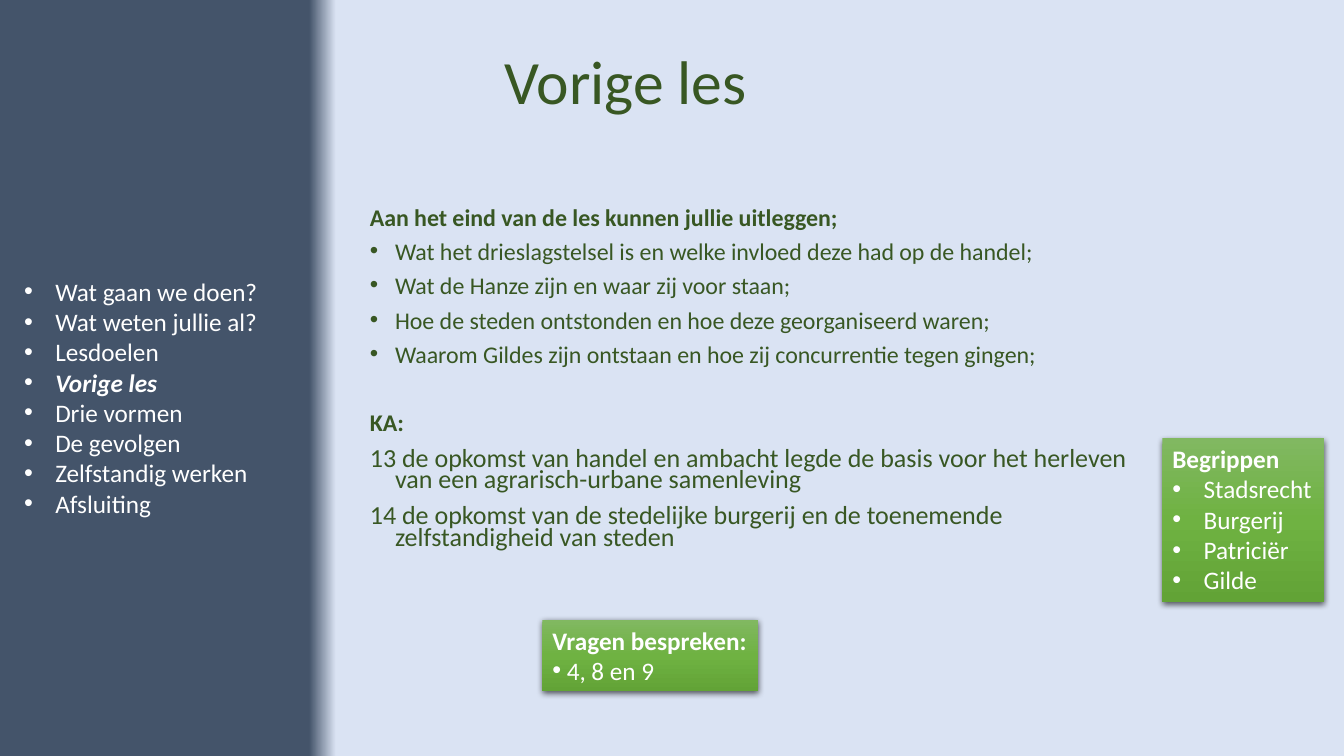
from copy import deepcopy
from lxml import etree
from pptx import Presentation
from pptx.dml.color import RGBColor
from pptx.enum.shapes import MSO_SHAPE
from pptx.enum.text import MSO_ANCHOR, MSO_AUTO_SIZE, PP_ALIGN
from pptx.oxml import parse_xml
from pptx.oxml.ns import nsdecls, qn
from pptx.util import Inches, Pt

RECTANGLE = MSO_SHAPE.RECTANGLE
LEFT = PP_ALIGN.LEFT
TOP, MIDDLE = MSO_ANCHOR.TOP, MSO_ANCHOR.MIDDLE
GROW, FIXED = MSO_AUTO_SIZE.SHAPE_TO_FIT_TEXT, MSO_AUTO_SIZE.NONE

THEME = {
    "font": "Calibri",
    "ink": "385723",
    "light": "FFFFFF",
    "backdrop": [(0.23, "44546A"), (0.25, "DAE3F3")],
    "card": [(0, "81B861"), (0.5, "6FB242"), (1, "62A336")],
    "title_size": 44,
    "goal_size": 17.1,
    "feature_size": 18.6,
    "label_size": 18,
}
CARD_SHADOW = (
    f'<a:effectLst {nsdecls("a")}><a:outerShdw blurRad="57150" dist="19050" '
    'dir="5400000" algn="ctr" rotWithShape="0"><a:srgbClr val="000000">'
    '<a:alpha val="63000"/></a:srgbClr></a:outerShdw></a:effectLst>'
)


def paint_gradient(fill, colours, angle):
    fill.gradient()
    fill.gradient_angle = angle
    first = fill.gradient_stops[0]._gs
    for _ in colours[2:]:
        first.addnext(deepcopy(first))
    for stop, (position, colour) in zip(fill.gradient_stops, colours):
        stop.position = position
        stop.color.rgb = RGBColor.from_string(colour)


def write_lines(frame, lines, colour, **spacing):
    for number, (text, size, style) in enumerate(lines):
        line = frame.paragraphs[0] if number == 0 else frame.add_paragraph()
        line.text = text
        line.alignment = LEFT
        for name, value in {**spacing, **style.get("spacing", {})}.items():
            setattr(line, name, value)
        look = {"name": THEME["font"], "size": Pt(size),
                "bold": style.get("bold", False), "italic": style.get("italic", False)}
        for name, value in look.items():
            setattr(line.runs[0].font, name, value)
        line.runs[0].font.color.rgb = RGBColor.from_string(colour)
        properties = line._p.get_or_add_pPr()
        indent = Inches(style.get("indent", 0))
        properties.set("marL", str(indent))
        properties.set("indent", str(-indent))
        if style.get("bullet"):
            etree.SubElement(properties, qn("a:buFont")).set("typeface", "Arial")
            etree.SubElement(properties, qn("a:buChar")).set("char", "•")
        else:
            etree.SubElement(properties, qn("a:buNone"))


deck = Presentation()
deck.slide_width, deck.slide_height = Inches(13.33), Inches(7.5)
lesson = deck.slides.add_slide(deck.slide_layouts[5])
paint_gradient(lesson.background.fill, THEME["backdrop"], 0)

heading = lesson.shapes.title
for side, length in {"left": 4.9, "top": 0.17, "width": 7.72, "height": 1.34}.items():
    setattr(heading, side, Inches(length))
heading.text_frame.vertical_anchor = MIDDLE
heading.text_frame.auto_size = FIXED
write_lines(heading.text_frame, [("Vorige les", THEME["title_size"], {})],
            THEME["ink"], line_spacing=0.9)

label, goal, feature = THEME["label_size"], THEME["goal_size"], THEME["feature_size"]
strong = {"bold": True}
item = {"bullet": True, "indent": 0.31}
goal_item = {"bullet": True, "indent": 0.25}
hanging = {"indent": 0.25}

agenda = ["Wat gaan we doen?", "Wat weten jullie al?", "Lesdoelen", "Vorige les",
          "Drie vormen", "De gevolgen", "Zelfstandig werken", "Afsluiting"]
current = {**item, "bold": True, "italic": True}
menu = lesson.shapes.add_textbox(Inches(0.14), Inches(2.69), Inches(2.64), Inches(2.52))
menu.text_frame.word_wrap = False
menu.text_frame.auto_size = GROW
write_lines(menu.text_frame,
            [(step, label, current if step == "Vorige les" else item) for step in agenda],
            THEME["light"])

goals = [
    "Wat het drieslagstelsel is en welke invloed deze had op de handel;",
    "Wat de Hanze zijn en waar zij voor staan;",
    "Hoe de steden ontstonden en hoe deze georganiseerd waren;",
    "Waarom Gildes zijn ontstaan en hoe zij concurrentie tegen gingen;",
]
features = [
    "13 de opkomst van handel en ambacht legde de basis voor het herleven "
    "van een agrarisch-urbane samenleving",
    "14 de opkomst van de stedelijke burgerij en de toenemende zelfstandigheid van steden",
]
content = lesson.shapes.add_textbox(Inches(3.57), Inches(2.04), Inches(7.9), Inches(3.59))
content.text_frame.word_wrap = True
content.text_frame.auto_size = FIXED
write_lines(
    content.text_frame,
    [("Aan het eind van de les kunnen jullie uitleggen;", goal, strong)]
    + [(text, goal, goal_item) for text in goals]
    + [("KA:", goal, {"bold": True, "spacing": {"space_before": Pt(34.4)}})]
    + [(text, feature, hanging) for text in features],
    THEME["ink"], line_spacing=0.7, space_before=Pt(10))

terms = ["Stadsrecht", "Burgerij", "Patriciër", "Gilde"]
cards = [
    ((11.53, 4.35, 1.6, 1.62),
     [("Begrippen", label, strong)] + [(term, label, item) for term in terms]),
    ((5.38, 6.15, 2.14, 0.71),
     [("Vragen bespreken:", label, strong), (" 4, 8 en 9", label, {"bullet": True})]),
]
for place, lines in cards:
    card = lesson.shapes.add_shape(RECTANGLE, *map(Inches, place))
    paint_gradient(card.fill, THEME["card"], 270)
    card.line.fill.background()
    card._element.spPr.append(parse_xml(CARD_SHADOW))
    for name, value in {"word_wrap": False, "auto_size": GROW, "vertical_anchor": TOP}.items():
        setattr(card.text_frame, name, value)
    write_lines(card.text_frame, lines, THEME["light"])

deck.save("out.pptx")
